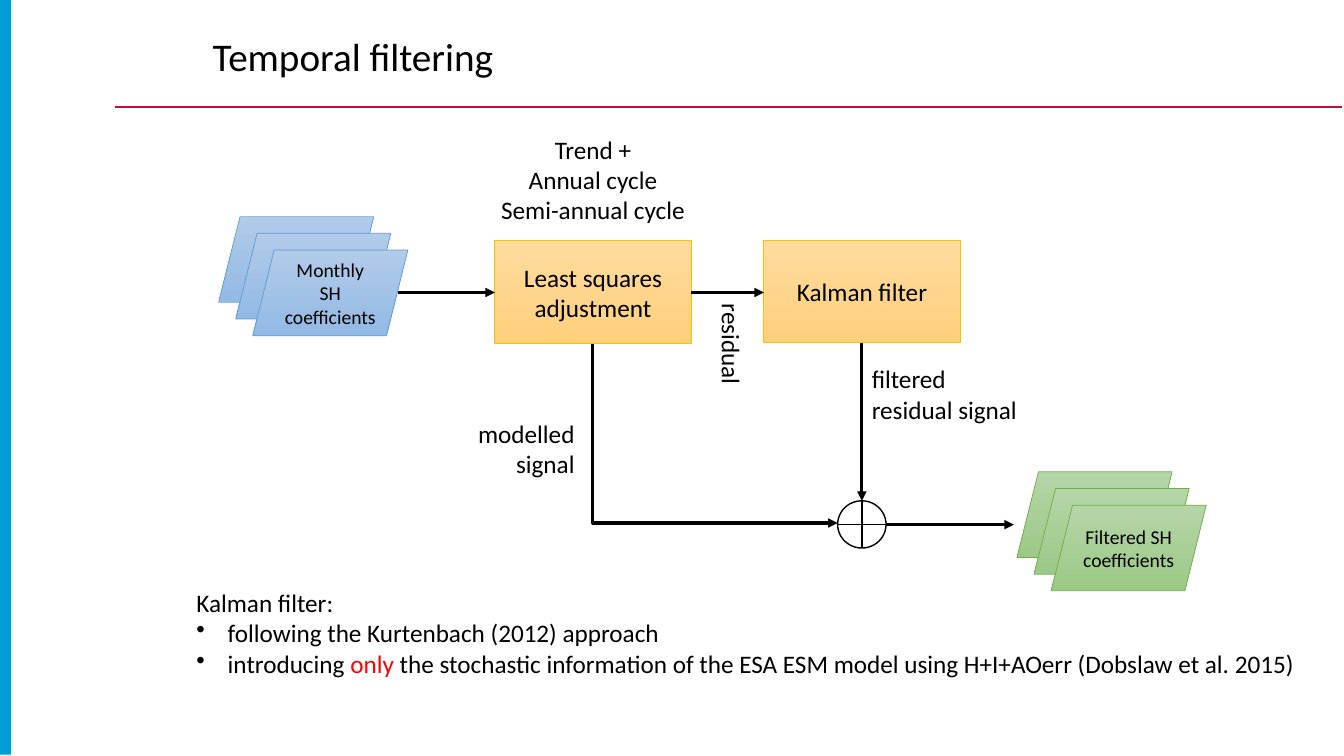
from dataclasses import dataclass

from lxml import etree
from pptx import Presentation
from pptx.dml.color import RGBColor
from pptx.enum.shapes import MSO_CONNECTOR, MSO_SHAPE
from pptx.enum.text import MSO_ANCHOR, PP_ALIGN
from pptx.oxml.ns import qn
from pptx.util import Cm, Pt

LEFT, CENTER, RIGHT = PP_ALIGN.LEFT, PP_ALIGN.CENTER, PP_ALIGN.RIGHT
TOP, MIDDLE = MSO_ANCHOR.TOP, MSO_ANCHOR.MIDDLE
RECTANGLE, PARALLELOGRAM = MSO_SHAPE.RECTANGLE, MSO_SHAPE.PARALLELOGRAM
SUM_JUNCTION = MSO_SHAPE.FLOWCHART_OR
STRAIGHT, ELBOW = MSO_CONNECTOR.STRAIGHT, MSO_CONNECTOR.ELBOW


@dataclass(frozen=True)
class Theme:
    font: str = "Calibri"
    title_size: int = 28
    body_size: int = 18
    data_size: int = 14
    black: str = "000000"
    white: str = "FFFFFF"
    accent: str = "FF0000"
    bar: str = "009ED4"
    rule: str = "BD0E3C"
    # Gradient start, gradient end, outline
    blue: tuple = ("B1CBE9", "93B9E4", "5B9BD5")
    orange: tuple = ("FFDB9E", "FFD07C", "FFC000")
    green: tuple = ("B5D5A7", "9CC987", "70AD47")


def rgb(color):
    return RGBColor.from_string(color)


class SlideBuilder:
    def __init__(self, page, theme):
        self.page = page
        self.theme = theme

    def fill_text(self, frame, paragraphs, size, align=LEFT, anchor=TOP):
        """Fill a frame; a paragraph is a string or a list of (text, color) spans."""
        frame.word_wrap = True
        frame.vertical_anchor = anchor
        for index, content in enumerate(paragraphs):
            para = frame.paragraphs[0] if index == 0 else frame.add_paragraph()
            para.alignment = align
            spans = [(content, None)] if isinstance(content, str) else content
            for text, color in spans:
                span = para.add_run()
                span.text = text
                if color:
                    span.font.color.rgb = rgb(color)
            self.set_font(para, size)
        return frame

    def set_font(self, para, size):
        para.font.name = self.theme.font
        para.font.size = Pt(size)
        para.font.color.rgb = rgb(self.theme.black)

    def text(self, x, y, width, height, paragraphs, size=None, align=LEFT,
             anchor=TOP, rotation=0):
        box = self.page.shapes.add_textbox(Cm(x), Cm(y), Cm(width), Cm(height))
        box.rotation = rotation
        return self.fill_text(box.text_frame, paragraphs,
                              size or self.theme.body_size, align, anchor)

    def bullet(self, para):
        properties = para._p.get_or_add_pPr()
        properties.set("marL", str(Cm(0.79)))
        properties.set("indent", str(-Cm(0.79)))
        mark = etree.Element(qn("a:buChar"), char="•")
        properties.insert(0, mark)

    def shape(self, kind, x, y, width, height, fill, line=None, line_width=1):
        shape = self.page.shapes.add_shape(kind, Cm(x), Cm(y), Cm(width), Cm(height))
        shape.shadow.inherit = False
        if isinstance(fill, str):
            shape.fill.solid()
            shape.fill.fore_color.rgb = rgb(fill)
        else:
            shape.fill.gradient()
            shape.fill.gradient_angle = 270
            for stop, color in zip(shape.fill.gradient_stops, fill):
                stop.color.rgb = rgb(color)
        if line:
            shape.line.color.rgb = rgb(line)
            shape.line.width = Pt(line_width)
        else:
            shape.line.fill.background()
        return shape

    def block(self, kind, x, y, width, height, palette, label=None, size=None):
        *gradient, outline = palette
        shape = self.shape(kind, x, y, width, height, gradient, outline, 0.5)
        if label:
            self.fill_text(shape.text_frame, [label], size or self.theme.body_size,
                           CENTER, MIDDLE)

    def stack(self, x, y, palette, label):
        """Three overlapping data sheets, the front one labelled."""
        for layer in range(3):
            self.block(PARALLELOGRAM, x + 0.43 * layer, y + 0.42 * layer, 3.91, 2.16,
                       palette, label if layer == 2 else None, self.theme.data_size)

    def line(self, x1, y1, x2, y2, color, width, kind=STRAIGHT):
        line = self.page.shapes.add_connector(kind, Cm(x1), Cm(y1), Cm(x2), Cm(y2))
        line.line.color.rgb = rgb(color)
        line.line.width = Pt(width)
        etree.SubElement(line._element.spPr, qn("a:effectLst"))
        return line

    def arrow(self, x1, y1, x2, y2, kind=STRAIGHT):
        arrow = self.line(x1, y1, x2, y2, self.theme.black, 2.25, kind)
        outline = arrow._element.spPr.find(qn("a:ln"))
        etree.SubElement(outline, qn("a:tailEnd"), type="triangle")
        return arrow

    def down_then_right(self, x1, y1, x2, y2):
        """One-bend arrow: a quarter-turned, mirrored connector around its centre."""
        center_x, center_y = (x1 + x2) / 2, (y1 + y2) / 2
        half_width, half_height = (y2 - y1) / 2, (x2 - x1) / 2
        arrow = self.arrow(center_x - half_width, center_y - half_height,
                           center_x + half_width, center_y + half_height, ELBOW)
        properties = arrow._element.spPr
        properties.find(qn("a:prstGeom")).set("prst", "bentConnector2")
        frame = properties.find(qn("a:xfrm"))
        frame.set("rot", str(270 * 60000))
        frame.set("flipH", "1")


def main():
    deck = Presentation()
    deck.slide_width, deck.slide_height = Cm(33.87), Cm(19.05)
    theme = Theme()
    slide = SlideBuilder(deck.slides.add_slide(deck.slide_layouts[6]), theme)

    # Side bar, rule and title
    slide.shape(RECTANGLE, 0, 0, 0.28, 19.02, theme.bar)
    slide.line(2.9, 2.69, 33.83, 2.69, theme.rule, 1.25)
    title = slide.text(5.11, 0.76, 26.44, 1.45, ["Temporal filtering"],
                       theme.title_size, anchor=MIDDLE)
    title.paragraphs[0].line_spacing = 0.9

    # Data stacks, processing steps and sum junction
    slide.stack(5.51, 5.46, theme.blue, "Monthly SH coefficients")
    slide.block(RECTANGLE, 12.47, 6.07, 4.95, 2.59, theme.orange,
                "Least squares adjustment")
    slide.block(RECTANGLE, 19.25, 6.05, 4.95, 2.59, theme.orange, "Kalman filter")
    slide.shape(SUM_JUNCTION, 21.11, 12.62, 1.22, 1.19, theme.white, theme.black)
    slide.stack(25.63, 11.89, theme.green, "Filtered SH coefficients")

    # Signal flow
    slide.down_then_right(14.94, 8.66, 21.11, 13.18)
    slide.arrow(21.72, 8.64, 21.72, 12.62)
    slide.arrow(22.33, 13.22, 25.55, 13.22)
    slide.arrow(17.42, 7.37, 19.25, 7.37)
    slide.arrow(10.03, 7.37, 12.47, 7.37)

    # Flow labels
    slide.text(12.34, 3.25, 5.21, 2.57,
               ["Trend +", "Annual cycle", "Semi-annual cycle"], align=CENTER)
    slide.text(16.74, 8.59, 3.4, 1.02, ["residual"], rotation=90)
    slide.text(11.33, 10.41, 3.4, 1.8, ["modelled signal"], align=RIGHT)
    slide.text(21.72, 9.04, 4.6, 1.8, ["filtered", "residual signal"])

    # Notes on the filter
    notes = slide.text(4.7, 14.68, 28.52, 2.57, [
        "Kalman filter:",
        "following the Kurtenbach (2012) approach",
        [("introducing ", None), ("only", theme.accent),
         (" the stochastic information of the ESA ESM model using H+I+AOerr "
          "(Dobslaw et al. 2015)", None)],
    ])
    for para in notes.paragraphs[1:]:
        slide.bullet(para)

    deck.save("out.pptx")


if __name__ == "__main__":
    main()
